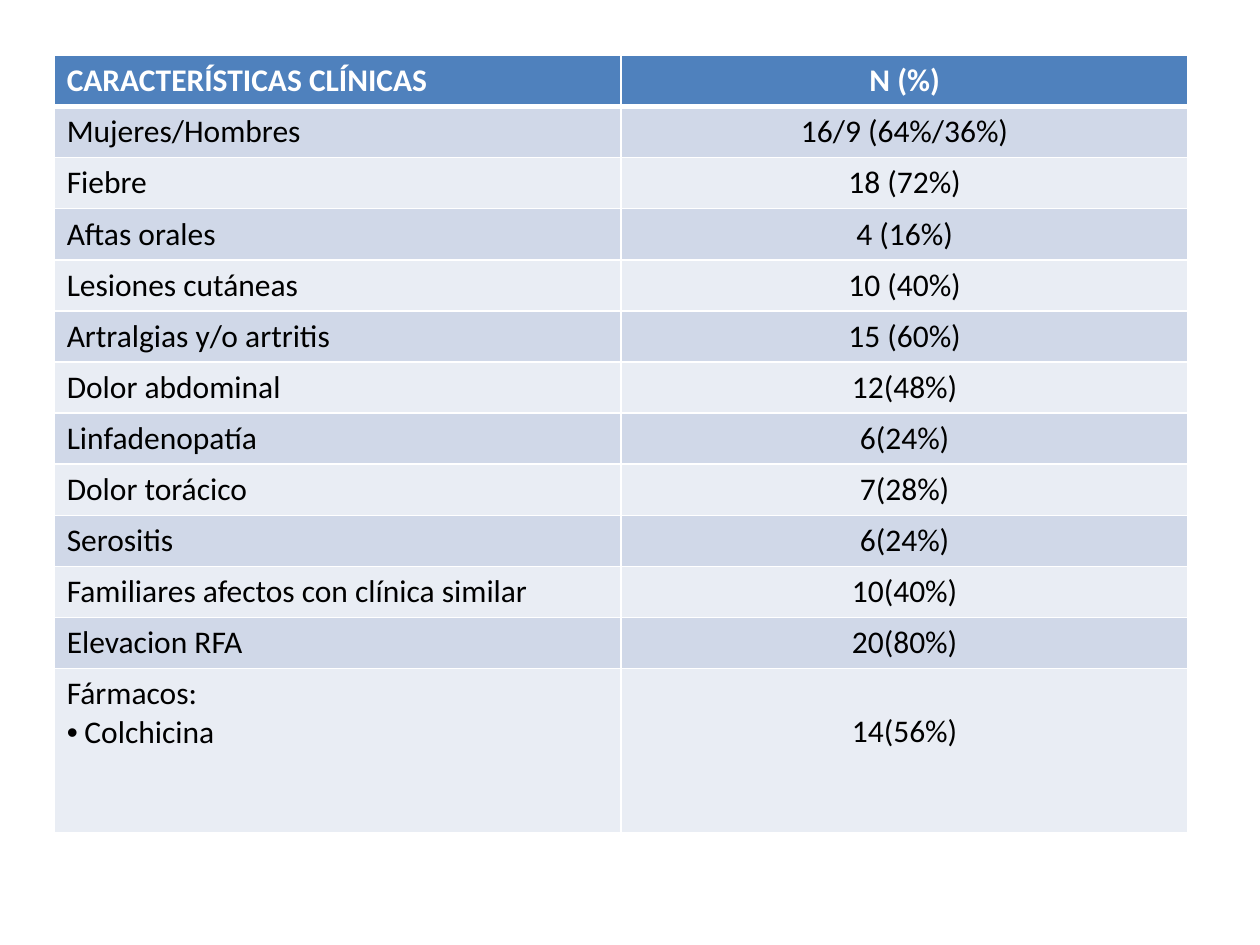
from lxml import etree
from pptx import Presentation
from pptx.dml.color import RGBColor
from pptx.enum.text import PP_ALIGN
from pptx.oxml.ns import qn
from pptx.util import Inches, Pt

COLORS = {
    "header": "4F81BD",
    "band_dark": "D0D8E8",
    "band_light": "E9EDF4",
    "rule": "FFFFFF",
    "header_text": "FFFFFF",
    "body_text": "000000",
}
FONT = "Calibri"
TEXT_SIZE = Pt(18)
BULLET_INDENT = Inches(0.14)
LINE_HEIGHT = Inches(0.3)

HEADINGS = ("CARACTERÍSTICAS CLÍNICAS", "N (%)")
FINDINGS = [
    ("Mujeres/Hombres", "16/9 (64%/36%)"),
    ("Fiebre", "18 (72%)"),
    ("Aftas orales", "4 (16%)"),
    ("Lesiones cutáneas", "10 (40%)"),
    ("Artralgias y/o artritis", "15 (60%)"),
    ("Dolor abdominal", "12(48%)"),
    ("Linfadenopatía", "6(24%)"),
    ("Dolor torácico", "7(28%)"),
    ("Serositis", "6(24%)"),
    ("Familiares afectos con clínica similar", "10(40%)"),
    ("Elevacion RFA", "20(80%)"),
    ("Fármacos:", "14(56%)"),
]
DRUG = "Colchicina"


def set_borders(cell, top=1, bottom=1):
    properties = cell._tc.get_or_add_tcPr()
    for side, width in (("L", 1), ("R", 1), ("T", top), ("B", bottom)):
        line = etree.SubElement(properties, qn(f"a:ln{side}"), w=str(Pt(width)))
        fill = etree.SubElement(line, qn("a:solidFill"))
        etree.SubElement(fill, qn("a:srgbClr"), val=COLORS["rule"])


def add_text(paragraph, text, color, bold=False):
    run = paragraph.add_run()
    run.text = text
    run.font.name = FONT
    run.font.size = TEXT_SIZE
    run.font.bold = bold
    run.font.color.rgb = RGBColor.from_string(COLORS[color])


def add_bullet(paragraph):
    properties = paragraph._p.get_or_add_pPr()
    properties.set("marL", str(BULLET_INDENT))
    properties.set("indent", str(-BULLET_INDENT))
    etree.SubElement(properties, qn("a:buFont"), typeface="Arial")
    etree.SubElement(properties, qn("a:buChar"), char="•")


def add_clinical_table(slide, left, top, width, height, drug_height):
    rows = [HEADINGS, *FINDINGS]
    table = slide.shapes.add_table(
        len(rows), len(HEADINGS), left, top, width, height).table
    for column in table.columns:
        column.width = width // len(HEADINGS)
    for row in table.rows:
        row.height = (height - drug_height) // (len(rows) - 1)
    table.rows[len(rows) - 1].height = drug_height

    for r, values in enumerate(rows):
        is_header = r == 0
        band = "header" if is_header else "band_dark" if r % 2 else "band_light"
        for c, value in enumerate(values):
            cell = table.cell(r, c)
            set_borders(cell, top=3 if r == 1 else 1, bottom=3 if is_header else 1)
            cell.fill.solid()
            cell.fill.fore_color.rgb = RGBColor.from_string(COLORS[band])
            paragraph = cell.text_frame.paragraphs[0]
            paragraph.alignment = PP_ALIGN.CENTER if c else PP_ALIGN.LEFT
            add_text(paragraph, value,
                     "header_text" if is_header else "body_text", is_header)

    # Drug row: bulleted drug, with its count level with it
    drug_cell, count_cell = table.rows[len(rows) - 1].cells
    drug_line = drug_cell.text_frame.add_paragraph()
    add_bullet(drug_line)
    add_text(drug_line, DRUG, "body_text")
    count_cell.margin_top = count_cell.margin_top + LINE_HEIGHT


def main():
    presentation = Presentation()
    presentation.slide_width = Inches(10)
    presentation.slide_height = Inches(7.5)
    slide = presentation.slides.add_slide(presentation.slide_layouts[6])
    add_clinical_table(slide, Inches(0.43), Inches(0.44), Inches(9),
                       Inches(6.17), drug_height=Inches(1.3))
    presentation.save("out.pptx")


if __name__ == "__main__":
    main()
